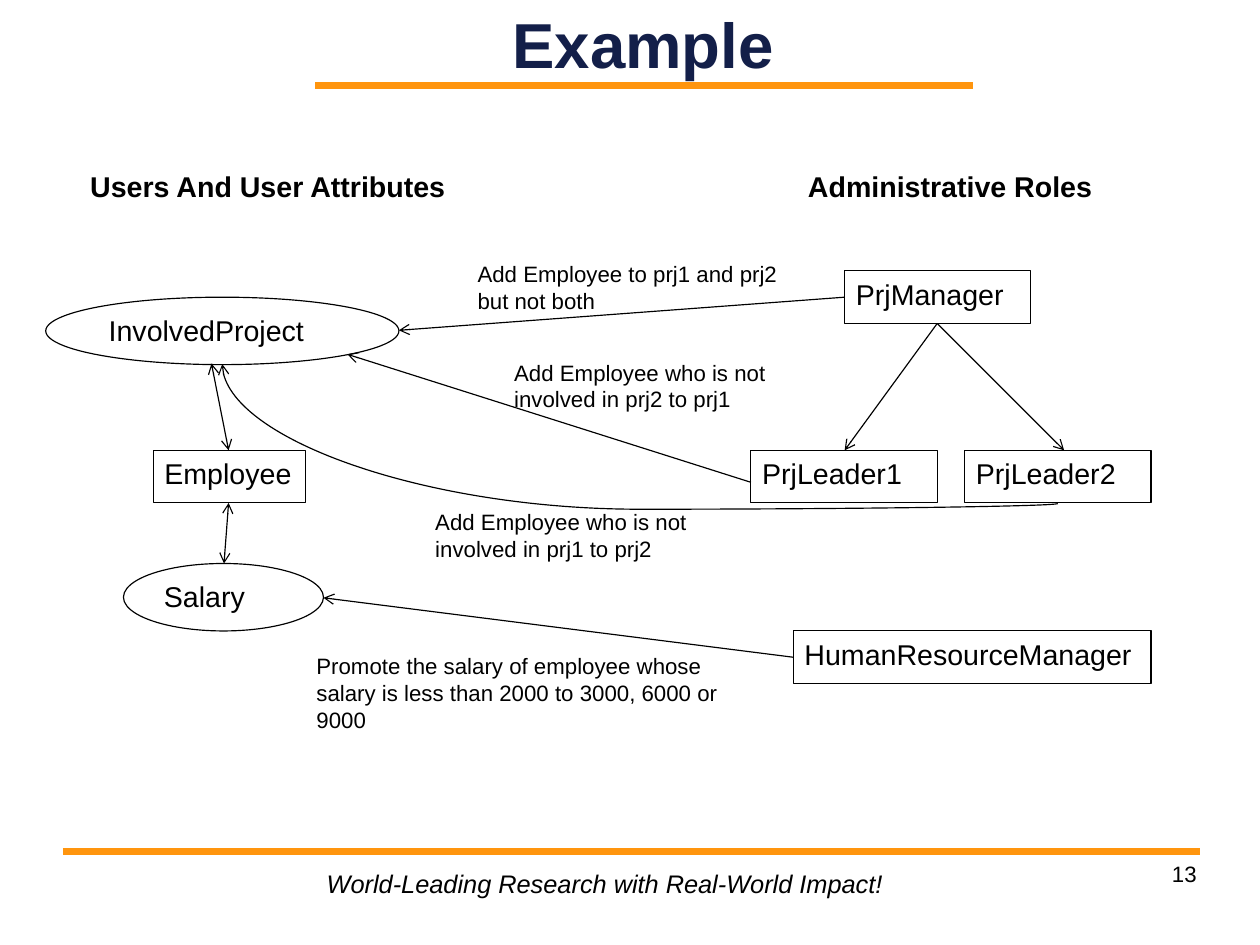
"""Build the slide showing administrative roles acting on user attributes."""
from dataclasses import dataclass
from typing import Optional

from lxml import etree
from pptx import Presentation
from pptx.dml.color import RGBColor
from pptx.enum import shapes, text
from pptx.oxml import ns
from pptx.util import Inches, Pt

SHAPE = shapes.MSO_SHAPE
CONNECTOR = shapes.MSO_CONNECTOR
ALIGN = text.PP_ALIGN
ANCHOR = text.MSO_ANCHOR
CM_PER_INCH = 2.54


@dataclass(frozen=True)
class Theme:
    font: str = "Arial"
    ink: str = "000000"
    paper: str = "FFFFFF"
    navy: str = "131F49"
    orange: str = "FF950E"
    title_size: float = 40
    node_size: float = 18
    footer_size: float = 16
    label_size: float = 14
    rule_width: float = 4.31
    link_width: float = 0.75


@dataclass(frozen=True)
class Style:
    size: float
    color: str = Theme.ink
    bold: bool = False
    italic: bool = False
    align: ALIGN = ALIGN.LEFT


@dataclass(frozen=True)
class Node:
    caption: str
    left: float
    top: float
    width: float
    height: float = 0.46
    kind: SHAPE = SHAPE.RECTANGLE
    heading: bool = False


@dataclass(frozen=True)
class Label:
    caption: str
    left: float
    top: float
    width: float
    height: float = 0.57
    style: Style = Style(Theme.label_size)
    wrap: bool = True
    inset: bool = True
    anchor: ANCHOR = ANCHOR.TOP


@dataclass(frozen=True)
class Link:
    start: tuple[float, float]
    end: tuple[float, float]
    color: str = Theme.ink
    width: float = Theme.link_width
    head: bool = False
    tail: bool = True
    rotation: int = 0
    bend: Optional[int] = None


RULES = [
    Link((2.76, 0.75), (8.51, 0.75), Theme.orange, Theme.rule_width, tail=False),
    Link((0.55, 7.45), (10.5, 7.45), Theme.orange, Theme.rule_width, tail=False),
]
NODES = [
    Node("Employee", 1.34, 3.94, 1.33),
    Node("InvolvedProject", 0.4, 2.6, 3.09, 0.59, SHAPE.OVAL),
    Node("Salary", 1.08, 4.93, 1.75, 0.59, SHAPE.OVAL),
    Node("PrjLeader1", 6.57, 3.94, 1.63),
    Node("PrjLeader2", 8.44, 3.94, 1.63),
    Node("PrjManager", 7.39, 2.37, 1.63),
    Node("HumanResourceManager", 6.94, 5.52, 3.13),
    Node("Administrative Roles", 6.94, 1.4, 3.13, 0.63, SHAPE.ROUNDED_RECTANGLE, True),
    Node("Users And User Attributes", 0.66, 1.4, 3.42, 0.63, SHAPE.ROUNDED_RECTANGLE, True),
]
LINKS = [
    Link((2, 3.94), (1.85, 3.18), head=True),
    Link((2, 4.4), (1.96, 4.93), head=True),
    Link((8.2, 2.83), (7.39, 3.94)),
    Link((8.2, 2.83), (9.31, 3.94)),
    Link((6.21, 0.14), (4.99, 7.45), rotation=90, bend=-4100),
    Link((6.94, 5.75), (2.83, 5.23)),
    Link((6.57, 4.22), (3.04, 3.1)),
    Link((7.39, 2.6), (3.49, 2.89)),
]
LABELS = [
    Label("13", 7.9, 7.53, 2.57, style=Style(Theme.label_size, align=ALIGN.RIGHT), inset=False),
    Label("World-Leading Research with Real-World Impact!", 2.76, 7.55, 5.08, 0.37,
          Style(Theme.footer_size, italic=True), wrap=False),
    Label("Example", 2.41, 0, 6.43, 0.75,
          Style(Theme.title_size, Theme.navy, bold=True, align=ALIGN.CENTER),
          inset=False, anchor=ANCHOR.MIDDLE),
    Label("Add Employee to prj1 and prj2 but not both", 4.08, 2.23, 2.86),
    Label("Add Employee who is not involved in prj2 to prj1", 4.4, 3.09, 2.86),
    Label("Add Employee who is not involved in prj1 to prj2", 3.71, 4.4, 2.86),
    Label("Promote the salary of employee whose salary is less than 2000 to 3000, 6000 or 9000",
          2.67, 5.66, 3.9, 0.81),
]


def write(frame, caption: str, style: Style) -> None:
    """Put one styled paragraph into a text frame."""
    frame.text = caption
    paragraph = frame.paragraphs[0]
    paragraph.alignment = style.align
    font = paragraph.runs[0].font
    font.name, font.size = Theme.font, Pt(style.size)
    font.bold, font.italic = style.bold, style.italic
    font.color.rgb = RGBColor.from_string(style.color)


def draw_node(slide, node: Node) -> None:
    """Draw a captioned shape, outlined unless it is a heading."""
    box = map(Inches, (node.left, node.top, node.width, node.height))
    shape = slide.shapes.add_shape(node.kind, *box)
    shape.shadow.inherit = False
    shape.fill.solid()
    shape.fill.fore_color.rgb = RGBColor.from_string(Theme.paper)
    if node.heading:
        shape.line.fill.background()
    else:
        shape.line.color.rgb = RGBColor.from_string(Theme.ink)
        shape.line.width = Pt(Theme.link_width)
    shape.text_frame.word_wrap = True
    shape.text_frame.vertical_anchor = ANCHOR.TOP
    write(shape.text_frame, node.caption, Style(Theme.node_size, bold=node.heading))


def draw_label(slide, label: Label) -> None:
    """Draw a free-standing text box."""
    box = map(Inches, (label.left, label.top, label.width, label.height))
    frame = slide.shapes.add_textbox(*box).text_frame
    frame.word_wrap = label.wrap
    frame.vertical_anchor = label.anchor
    if not label.inset:
        frame.margin_left = frame.margin_right = frame.margin_top = frame.margin_bottom = 0
    write(frame, label.caption, label.style)


def draw_link(slide, link: Link) -> None:
    """Draw a straight or curved connector with its arrowheads."""
    kind = CONNECTOR.STRAIGHT if link.bend is None else CONNECTOR.CURVE
    connector = slide.shapes.add_connector(kind, *map(Inches, link.start + link.end))
    connector.line.color.rgb = RGBColor.from_string(link.color)
    connector.line.width = Pt(link.width)
    line = connector.line._get_or_add_ln()
    for tag, shown in (("a:headEnd", link.head), ("a:tailEnd", link.tail)):
        if shown:
            etree.SubElement(line, ns.qn(tag), type="arrow")
    properties = connector._element.spPr
    etree.SubElement(properties, ns.qn("a:effectLst"))
    if link.bend is not None:
        properties.find(ns.qn("a:xfrm")).set("rot", str(link.rotation * 60000))
        adjustments = properties.find(".//" + ns.qn("a:avLst"))
        etree.SubElement(adjustments, ns.qn("a:gd"), name="adj1", fmla=f"val {link.bend}")


def main() -> None:
    """Build and save the presentation."""
    presentation = Presentation()
    presentation.slide_width = Inches(28 / CM_PER_INCH)
    presentation.slide_height = Inches(21 / CM_PER_INCH)
    slide = presentation.slides.add_slide(presentation.slide_layouts[6])
    for node in NODES:
        draw_node(slide, node)
    for link in RULES + LINKS:
        draw_link(slide, link)
    for label in LABELS:
        draw_label(slide, label)
    presentation.save("out.pptx")


if __name__ == "__main__":
    main()
